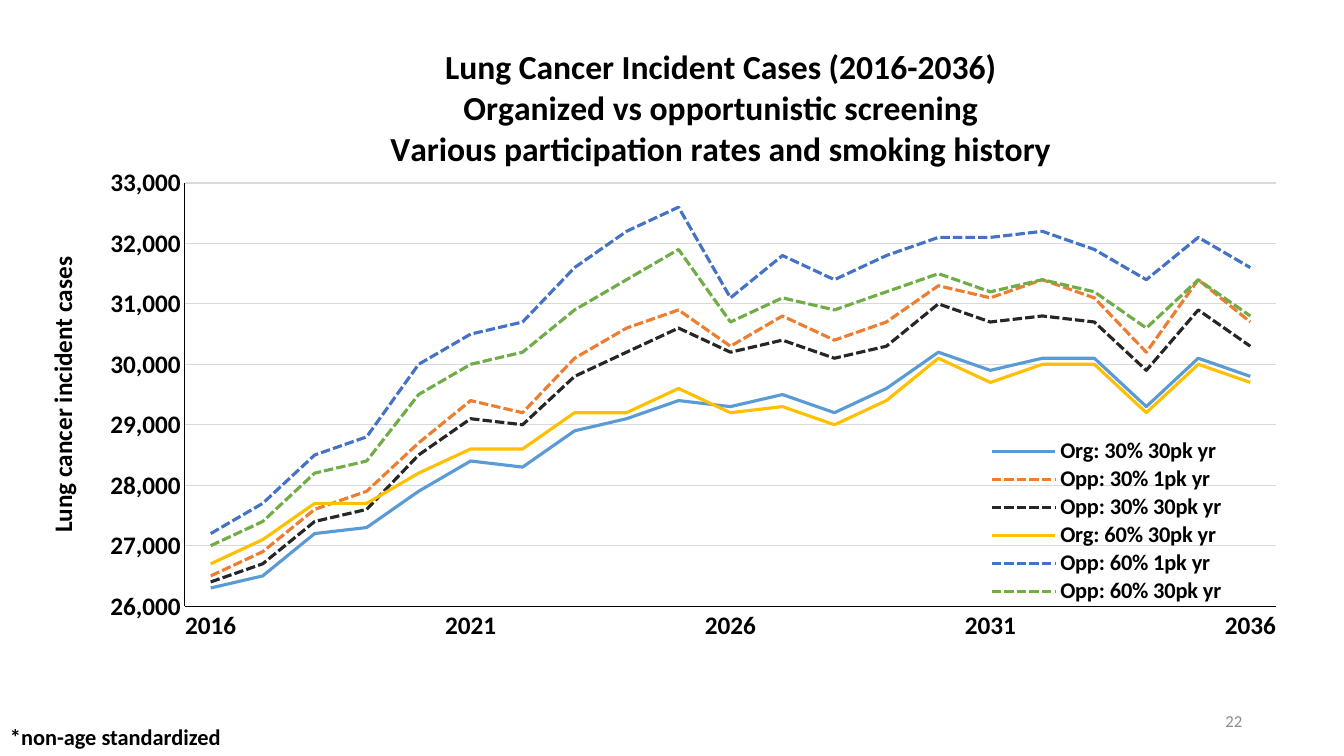
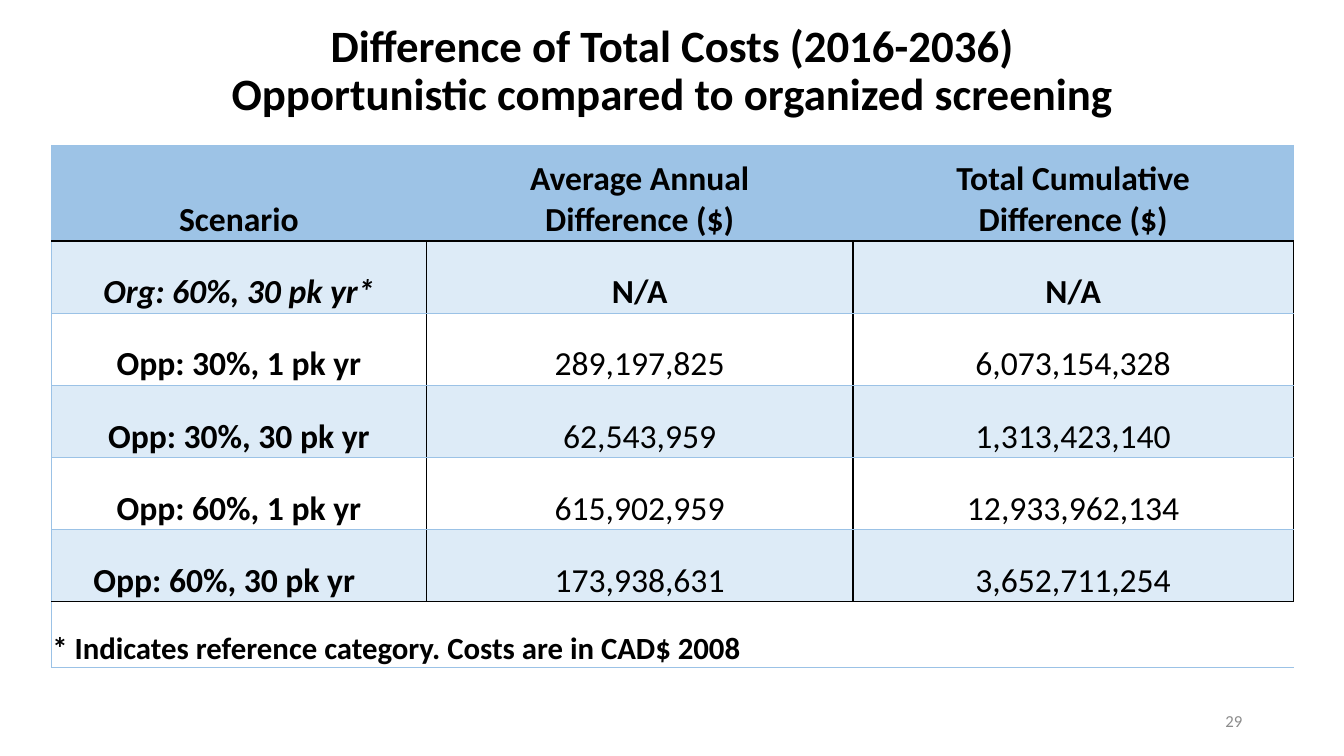
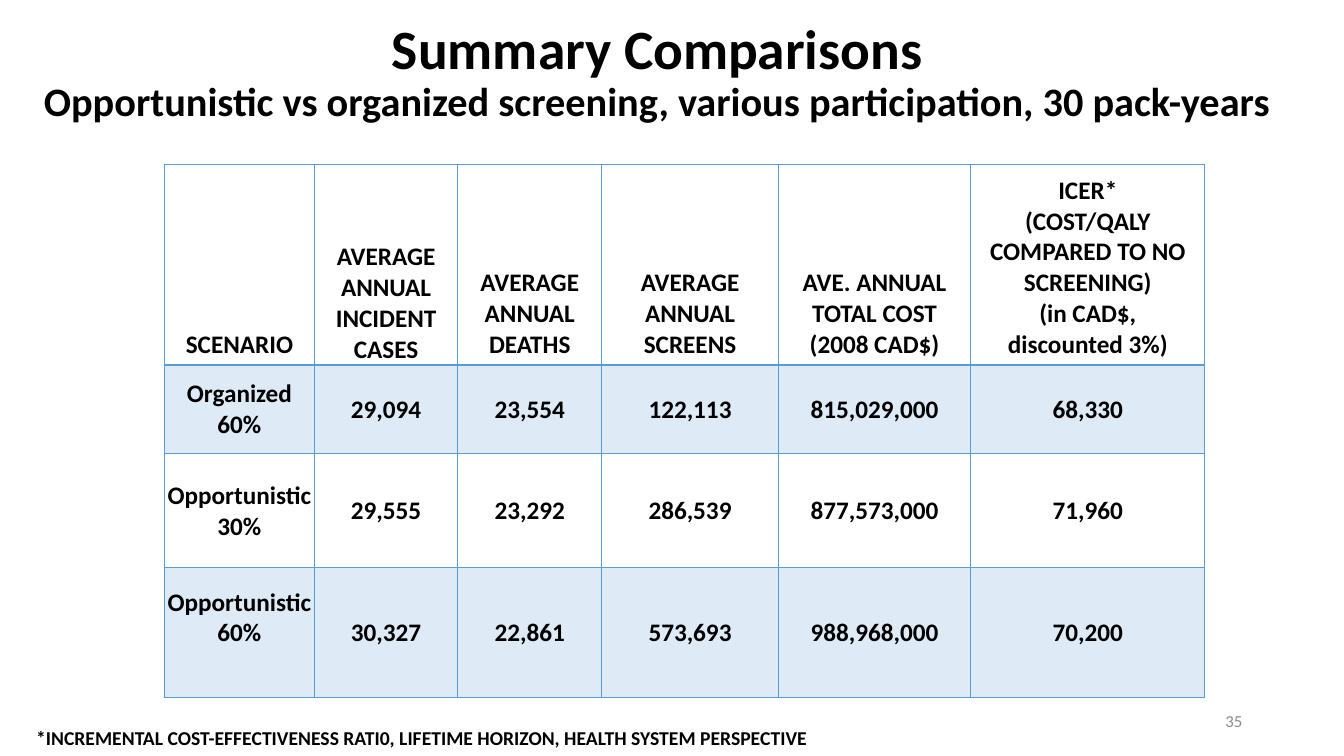
from itertools import cycle

from lxml import etree
from pptx import Presentation
from pptx.chart.data import CategoryChartData
from pptx.dml.color import RGBColor
from pptx.enum import chart as ch, dml, text
from pptx.oxml import parse_xml
from pptx.oxml.ns import nsdecls, qn
from pptx.util import Inches, Pt

rgb = RGBColor.from_string
FONT = "Calibri"
BLACK, GREY, GRID = "000000", "8C8C8C", "D9D9D9"
BLUE, HEAD_BLUE, RULE_BLUE = "5B9BD5", "9DC3E6", "9BC2E6"
BAND, PALE = "DDEBF7", "DEEBF7"
LEFT, CENTER, RIGHT = text.PP_ALIGN.LEFT, text.PP_ALIGN.CENTER, text.PP_ALIGN.RIGHT
TOP, MIDDLE, BOTTOM = text.MSO_ANCHOR.TOP, text.MSO_ANCHOR.MIDDLE, text.MSO_ANCHOR.BOTTOM


def write(tf, words, sizes, align=CENTER, bold=True, color=BLACK):
    """Fill a text frame; the sizes apply to its paragraphs in turn."""
    tf.text = words
    for p, size in zip(tf.paragraphs, cycle(sizes)):
        p.alignment = align
        for r in p.runs:
            r.font.name, r.font.size, r.font.bold = FONT, Pt(size), bold
            r.font.color.rgb = rgb(color)


def style_cell(cell, anchor, fill, edges):
    """Set anchor, tight margins, fill and the left, right, top, bottom edges."""
    cell.vertical_anchor = anchor
    cell.margin_left = cell.margin_right = cell.margin_top = Inches(0.01)
    cell.margin_bottom = 0
    tcPr = cell._tc.get_or_add_tcPr()
    for side, edge in zip("LRTB", edges):
        ln = etree.SubElement(tcPr, qn("a:ln" + side))
        if edge:
            color, width = edge
            ln.set("w", str(Pt(width)))
            paint = etree.SubElement(ln, qn("a:solidFill"))
            etree.SubElement(paint, qn("a:srgbClr"), val=color)
        else:
            etree.SubElement(ln, qn("a:noFill"))
    if fill:
        cell.fill.solid()
        cell.fill.fore_color.rgb = rgb(fill)
    else:
        cell.fill.background()


prs = Presentation()
prs.slide_width, prs.slide_height = Inches(13.33), Inches(7.5)
cases, costs, summary = [prs.slides.add_slide(prs.slide_layouts[6]) for _ in range(3)]

# Incident cases: line chart, values in hundreds
series = [
    ("Org: 30% 30pk yr", BLUE, False,
     [263, 265, 272, 273, 279, 284, 283, 289, 291, 294, 293,
      295, 292, 296, 302, 299, 301, 301, 293, 301, 298]),
    ("Opp: 30% 1pk yr", "ED7D31", True,
     [265, 269, 276, 279, 287, 294, 292, 301, 306, 309, 303,
      308, 304, 307, 313, 311, 314, 311, 302, 314, 307]),
    ("Opp: 30% 30pk yr", "262626", True,
     [264, 267, 274, 276, 285, 291, 290, 298, 302, 306, 302,
      304, 301, 303, 310, 307, 308, 307, 299, 309, 303]),
    ("Org: 60% 30pk yr", "FFC000", False,
     [267, 271, 277, 277, 282, 286, 286, 292, 292, 296, 292,
      293, 290, 294, 301, 297, 300, 300, 292, 300, 297]),
    ("Opp: 60% 1pk yr", "4472C4", True,
     [272, 277, 285, 288, 300, 305, 307, 316, 322, 326, 311,
      318, 314, 318, 321, 321, 322, 319, 314, 321, 316]),
    ("Opp: 60% 30pk yr", "70AD47", True,
     [270, 274, 282, 284, 295, 300, 302, 309, 314, 319, 307,
      311, 309, 312, 315, 312, 314, 312, 306, 314, 308]),
]
data = CategoryChartData(number_format="#,##0")
data.categories = [str(y) if y % 5 == 1 else "" for y in range(2016, 2037)]
for name, color, dashed, hundreds in series:
    data.add_series(name, [v * 100 for v in hundreds])
chart = cases.shapes.add_chart(
    ch.XL_CHART_TYPE.LINE, Inches(0.25), Inches(0.23), Inches(12.56), Inches(6.42), data).chart
chart.font.name, chart.font.size = FONT, Pt(10)
chart.font.color.rgb = rgb(BLACK)
plot = chart.plots[0]
plot.vary_by_categories = False
for line, (name, color, dashed, hundreds) in zip(plot.series, series):
    line.smooth = False
    line.format.line.width = Pt(2.25)
    line.format.line.color.rgb = rgb(color)
    if dashed:
        line.format.line.dash_style = dml.MSO_LINE.SQUARE_DOT

# Chart axes, titles and legend
years, counts = chart.category_axis, chart.value_axis
for axis in (years, counts):
    axis.major_tick_mark = axis.minor_tick_mark = ch.XL_TICK_MARK.NONE
    axis.format.line.color.rgb = rgb(BLACK)
    axis.format.line.width = Pt(0.75)
chart.has_legend = True
legend = chart.legend
legend.position = ch.XL_LEGEND_POSITION.RIGHT
legend.include_in_layout = False
for font, size in ((years.tick_labels.font, 18), (counts.tick_labels.font, 18), (legend.font, 16)):
    font.name, font.size, font.bold = FONT, Pt(size), True
    font.color.rgb = rgb(BLACK)
counts.minimum_scale, counts.maximum_scale, counts.major_unit = 26000, 33000, 1000
counts.tick_labels.number_format = "#,##0"
counts.tick_labels.number_format_is_linked = False
counts.major_gridlines.format.line.color.rgb = rgb(GRID)
counts.major_gridlines.format.line.width = Pt(0.75)
write(chart.chart_title.text_frame,
      "Lung Cancer Incident Cases (2016-2036)\nOrganized vs opportunistic screening\n"
      "Various participation rates and smoking history", [24])
write(counts.axis_title.text_frame, "Lung cancer incident cases", [18])
counts.axis_title._element.find(".//" + qn("a:bodyPr")).set("rot", "-5400000")
skip = parse_xml('<c:tickLblSkip %s val="1"/>' % nsdecls("c"))
years._element.find(qn("c:noMultiLvlLbl")).addprevious(skip)

# Manual places inside the chart, as fractions of its size
places = [
    (plot._element.getparent(), None, "inner", (0.126, 0.247, 0.862, 0.654)),
    (legend._element, "c:legendPos", None, (0.754, 0.64, 0.2, 0.26)),
    (chart.chart_title._element, "c:tx", None, (0.286, 0.03)),
    (counts.axis_title._element, "c:tx", None, (0.012, 0.354)),
]
for parent, before, target, fractions in places:
    for old in parent.findall(qn("c:layout")):
        parent.remove(old)
    layout = parse_xml("<c:layout %s><c:manualLayout/></c:layout>" % nsdecls("c"))
    manual = layout[0]
    if target:
        etree.SubElement(manual, qn("c:layoutTarget"), val=target)
    for tag in ("xMode", "yMode"):
        etree.SubElement(manual, qn("c:" + tag), val="edge")
    for tag, fraction in zip("xywh", fractions):
        etree.SubElement(manual, qn("c:" + tag), val=str(fraction))
    if before:
        parent.find(qn(before)).addnext(layout)
    else:
        parent.insert(0, layout)

# Both tables: frames and column and row sizes
cost_rows = [
    ["Scenario", "Average Annual\nDifference ($)", "Total Cumulative\nDifference ($)"],
    ["Org: 60%, 30 pk yr*", "N/A", "N/A"],
    ["Opp: 30%, 1 pk yr", "289,197,825", "6,073,154,328"],
    ["Opp: 30%, 30 pk yr", "62,543,959", "1,313,423,140"],
    ["Opp: 60%, 1 pk yr", "615,902,959", "12,933,962,134"],
    ["Opp: 60%, 30 pk yr", "173,938,631", "3,652,711,254"],
    ["* Indicates reference category. Costs are in CAD$ 2008", "", ""],
]
summary_rows = [
    ["SCENARIO", "AVERAGE ANNUAL INCIDENT CASES", "AVERAGE ANNUAL DEATHS",
     "AVERAGE ANNUAL SCREENS", "AVE. ANNUAL TOTAL COST\n(2008 CAD$)",
     "ICER*\n(COST/QALY COMPARED TO NO SCREENING)\n(in CAD$, discounted 3%)"],
    ["Organized\n60%", "29,094", "23,554", "122,113", "815,029,000", "68,330"],
    ["Opportunistic 30%", "29,555", "23,292", "286,539", "877,573,000", "71,960"],
    ["Opportunistic 60%", "30,327", "22,861", "573,693", "988,968,000", "70,200"],
]
frames = [
    (costs, 0.51, 1.44, [3.72, 4.23, 4.37], [0.95] + [0.715] * 5 + [0.66]),
    (summary, 1.63, 1.63, [1.49, 1.42, 1.43, 1.75, 1.91, 2.32], [1.99, 0.88, 1.13, 1.29]),
]
tables = []
for s, left, top, widths, heights in frames:
    table = s.shapes.add_table(len(heights), len(widths), Inches(left), Inches(top),
                               Inches(sum(widths)), Inches(sum(heights))).table
    table.first_row = table.horz_banding = False
    for column, width in zip(table.columns, widths):
        column.width = Inches(width)
    for row, height in zip(table.rows, heights):
        row.height = Inches(height)
    tables.append(table)
cost_table, summary_table = tables

# Cost differences: black rules in the body, blue ones elsewhere
black, thin = (BLACK, 1), (RULE_BLUE, 0.5)
note = len(cost_rows) - 1
cost_table.cell(note, 0).merge(cost_table.cell(note, 2))
for i, row in enumerate(cost_rows):
    body = 0 < i < note
    inner = black if body else None
    for j, words in enumerate(row):
        cell = cost_table.cell(i, j)
        edges = (thin if j == 0 else inner,
                 inner if j < 2 or body else thin,
                 black if i in (1, note) else thin,
                 black if i in (0, note - 1) else thin)
        fill = HEAD_BLUE if i == 0 else BAND if body and i % 2 else None
        style_cell(cell, BOTTOM, fill, edges)
        write(cell.text_frame, words, [22 if i == note else 24],
              align=LEFT if i == note else CENTER, bold=j == 0 or i < 2)
cost_table.cell(1, 0).text_frame.paragraphs[0].runs[0].font.italic = True
cost_table.cell(note - 1, 0).margin_right = Inches(0.3)

# Summary comparisons: blue grid with a heavier rule below the header
fine, heavy = (BLUE, 1), (BLUE, 2)
for i, row in enumerate(summary_rows):
    for j, words in enumerate(row):
        cell = summary_table.cell(i, j)
        edges = (fine, fine, heavy if i == 1 else fine, heavy if i == 0 else fine)
        style_cell(cell, MIDDLE if i else BOTTOM, PALE if i % 2 else None, edges)
        write(cell.text_frame, words, [18])
        if i == 0 and j != 1:
            cell.margin_left = cell.margin_right = Inches(0.1)
            cell.margin_top = cell.margin_bottom = Inches(0.05)
        if i == 3:
            cell.fill.solid()
            cell.fill.fore_color.rgb = rgb(PALE)
summary_table.cell(3, 0).margin_bottom = Inches(0.3)

# Titles, captions and slide numbers
title = dict(align=CENTER)
caption = dict(align=LEFT)
number = dict(align=RIGHT, bold=False, color=GREY)
number_box = (9.42, 6.95, 3, 0.4)
boxes = [
    (costs, (0.1, 0.32, 13.14, 0.79), [32], title,
     "Difference of Total Costs (2016-2036)\nOpportunistic compared to organized screening"),
    (summary, (0.26, 0, 12.52, 1.45), [39.6, 28.8], title,
     "Summary Comparisons\n"
     "Opportunistic vs organized screening, various participation, 30 pack-years"),
    (cases, (0, 7.13, 2.32, 0.37), [16], caption, "*non-age standardized"),
    (summary, (0.26, 7.15, 9.28, 0.34), [14], caption,
     "*INCREMENTAL COST-EFFECTIVENESS RATI0, LIFETIME HORIZON, HEALTH SYSTEM PERSPECTIVE"),
    (cases, number_box, [12], number, "22"),
    (costs, number_box, [12], number, "29"),
    (summary, number_box, [12], number, "35"),
]
for s, box, sizes, style, words in boxes:
    tf = s.shapes.add_textbox(*map(Inches, box)).text_frame
    tf.word_wrap = s is not cases or style is not caption
    tf.vertical_anchor = TOP if style is caption else MIDDLE
    write(tf, words, sizes, **style)
    if style is title:
        for p in tf.paragraphs:
            p.line_spacing = 0.9

prs.save("out.pptx")
